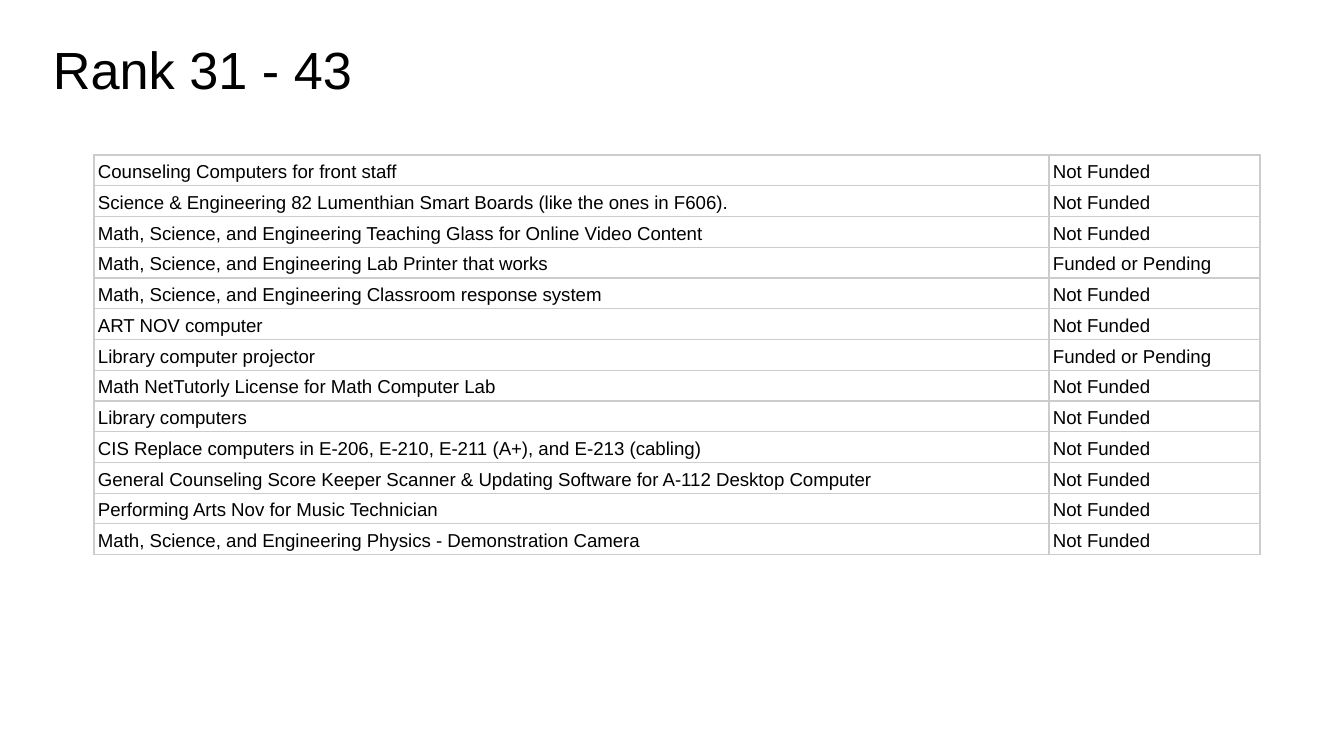
from lxml import etree
from pptx import Presentation
from pptx.dml.color import RGBColor
from pptx.enum.text import MSO_ANCHOR
from pptx.oxml.ns import qn
from pptx.util import Pt

BOTTOM = MSO_ANCHOR.BOTTOM
TOP = MSO_ANCHOR.TOP
BLACK = RGBColor(0x00, 0x00, 0x00)
WHITE = RGBColor(0xFF, 0xFF, 0xFF)
GREY = RGBColor(0xCC, 0xCC, 0xCC)
SCALE = 914400 / 134.4

NO = "Not Funded"
YES = "Funded or Pending"
ITEMS = [
    ("Counseling Computers for front staff", NO),
    ("Science & Engineering 82 Lumenthian Smart Boards (like the ones in F606).", NO),
    ("Math, Science, and Engineering Teaching Glass for Online Video Content", NO),
    ("Math, Science, and Engineering Lab Printer that works", YES),
    ("Math, Science, and Engineering Classroom response system", NO),
    ("ART NOV computer", NO),
    ("Library computer projector", YES),
    ("Math NetTutorly License for Math Computer Lab", NO),
    ("Library computers", NO),
    ("CIS Replace computers in E-206, E-210, E-211 (A+), and E-213 (cabling)", NO),
    ("General Counseling Score Keeper Scanner & Updating Software for A-112 Desktop Computer", NO),
    ("Performing Arts Nov for Music Technician", NO),
    ("Math, Science, and Engineering Physics - Demonstration Camera", NO),
]


def px(n):
    """Turn pixels into EMU."""
    return round(n * SCALE)


def apply(obj, form):
    """Set each format value on an object."""
    for name, value in form.items():
        setattr(obj, name, value)


def write(frame, text, size):
    """Write one run of black Arial text and return its paragraph."""
    para = frame.paragraphs[0]
    run = para.add_run()
    run.text = text
    apply(run.font, {"name": "Arial", "size": Pt(size), "bold": False})
    run.font.color.rgb = BLACK
    return para


def add_title(slide, text):
    """Add the slide title."""
    frame = slide.shapes.add_textbox(px(40), px(19), px(1253), px(85)).text_frame
    apply(frame, {
        "word_wrap": True,
        "vertical_anchor": TOP,
        "margin_left": px(13),
        "margin_right": px(13),
        "margin_top": px(18),
        "margin_bottom": px(8),
    })
    write(frame, text, 28)


def add_edges(cell):
    """Draw thin grey borders, which must come before the cell fill."""
    props = cell._tc.get_or_add_tcPr()
    for spot, side in enumerate(("lnL", "lnR", "lnT", "lnB")):
        line = etree.Element(qn(f"a:{side}"), w=str(Pt(0.75)))
        fill = etree.SubElement(line, qn("a:solidFill"))
        etree.SubElement(fill, qn("a:srgbClr"), val=str(GREY))
        props.insert(spot, line)


def fill_cell(cell, text):
    """Format one cell and write its text."""
    apply(cell, {
        "vertical_anchor": BOTTOM,
        "margin_left": px(4),
        "margin_right": px(4),
        "margin_top": px(2),
        "margin_bottom": px(3),
    })
    cell.fill.solid()
    cell.fill.fore_color.rgb = WHITE
    add_edges(cell)
    write(cell.text_frame, text, 10).line_spacing = 1.15


def add_grid(slide, items, widths):
    """Add the table of ranked items."""
    high = px(385)
    frame = slide.shapes.add_table(
        len(items), len(widths), px(94), px(155), px(sum(widths)), high)
    table = frame.table
    apply(table, {"first_row": False, "horz_banding": False})
    for col, width in zip(table.columns, widths):
        col.width = px(width)
    for row, texts in zip(table.rows, items):
        row.height = high // len(items)
        for cell, text in zip(row.cells, texts):
            fill_cell(cell, text)


def main():
    """Build and save the slide."""
    deck = Presentation()
    apply(deck, {"slide_width": px(1344), "slide_height": px(756)})
    slide = deck.slides.add_slide(deck.slide_layouts[6])
    add_title(slide, "Rank 31 - 43")
    add_grid(slide, ITEMS, (955, 211))
    deck.save("out.pptx")


if __name__ == "__main__":
    main()
